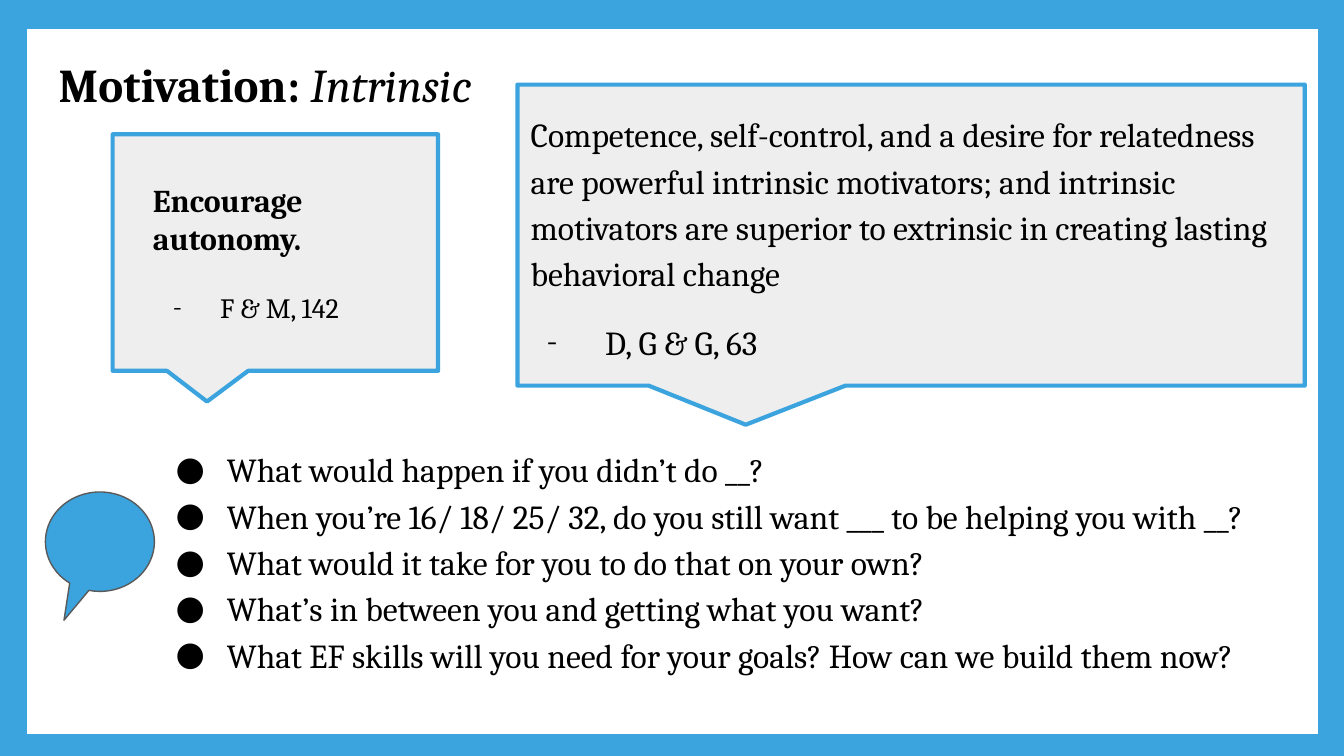
"""Build the slide on intrinsic motivation."""
from lxml import etree
from pptx import Presentation
from pptx.dml.color import RGBColor
from pptx.enum import shapes, text
from pptx.oxml import ns
from pptx.util import Cm, Pt

FONT = "Cambria"
COLORS = {"blue": "3BA3DD", "panel": "EEEEEE", "ink": "000000", "outline": "595959"}
QUESTIONS = [
    "What would happen if you didn’t do __?",
    "When you’re 16/ 18/ 25/ 32, do you still want ___ to be helping you with __?",
    "What would it take for you to do that on your own?",
    "What’s in between you and getting what you want?",
    "What EF skills will you need for your goals? How can we build them now?",
]
AUTONOMY = ["Encourage autonomy.", "F & M, 142"]
COMPETENCE = [
    "Competence, self-control, and a desire for relatedness are powerful intrinsic "
    "motivators; and intrinsic motivators are superior to extrinsic in creating "
    "lasting behavioral change",
    " D, G & G, 63",
]


def rgb(name):
    """Return the named colour."""
    return RGBColor.from_string(COLORS[name])


def style_run(r, size, bold=False, italic=False):
    """Format one run."""
    r.font.name, r.font.size = FONT, Pt(size)
    r.font.bold, r.font.italic = bold, italic
    r.font.color.rgb = rgb("ink")


def style_paragraph(p, size, bold=False, spacing=1.0, before=0):
    """Format a left-aligned paragraph and its runs."""
    p.alignment = text.PP_ALIGN.LEFT
    p.line_spacing, p.space_before = spacing, Pt(before)
    for r in p.runs:
        style_run(r, size, bold)


def add_bullet(p, char, hanging=0.97):
    """Give a paragraph a hanging bullet, with the hang in centimetres."""
    pPr = p._p.get_or_add_pPr()
    pPr.set("marL", str(Cm(1.27)))
    pPr.set("indent", str(-Cm(hanging)))
    color = etree.SubElement(pPr, ns.qn("a:buClr"))
    etree.SubElement(color, ns.qn("a:srgbClr"), val=COLORS["ink"])
    etree.SubElement(pPr, ns.qn("a:buFont"), typeface=FONT)
    etree.SubElement(pPr, ns.qn("a:buChar"), char=char)


def setup_frame(tf, anchor, left=0.25):
    """Set wrapping, anchor and insets of a text frame."""
    tf.word_wrap, tf.auto_size = True, text.MSO_AUTO_SIZE.NONE
    tf.vertical_anchor = anchor
    tf.margin_left = Cm(left)
    tf.margin_right = tf.margin_top = tf.margin_bottom = Cm(0.25)


def add_shape(s, kind, box, line, width, fill=None, tail=None):
    """Add a preset shape, with a callout tail if one is given."""
    sp = s.shapes.add_shape(kind, *map(Cm, box))
    sp.shadow.inherit = False
    sp.line.color.rgb, sp.line.width = rgb(line), Pt(width)
    if fill:
        sp.fill.solid()
        sp.fill.fore_color.rgb = rgb(fill)
    else:
        sp.fill.background()
    for i, value in enumerate(tail or []):
        sp.adjustments[i] = value
    return sp


def add_quote(s, box, lines, sizes, bold, spacing, before, left, hanging):
    """Add a callout with a statement and its dashed citation."""
    sp = add_shape(s, shapes.MSO_SHAPE.RECTANGULAR_CALLOUT, box, "blue", 2.25,
                   "panel", (-0.21, 0.63))
    tf = sp.text_frame
    setup_frame(tf, text.MSO_ANCHOR.MIDDLE, left)
    tf.text = "\n".join(lines)
    statement, citation = tf.paragraphs
    style_paragraph(statement, sizes[0], bold, spacing)
    style_paragraph(citation, sizes[1], spacing=spacing, before=before)
    add_bullet(citation, "-", hanging)


def set_title(s, strong, light):
    """Place the title and format its two parts."""
    sp = s.shapes.title
    sp.left, sp.top, sp.width, sp.height = map(Cm, (0.86, 0.79, 23.67, 1.6))
    setup_frame(sp.text_frame, text.MSO_ANCHOR.TOP)
    p = sp.text_frame.paragraphs[0]
    p.text = strong
    style_paragraph(p, 25.2, bold=True)
    r = p.add_run()
    r.text = light
    style_run(r, 25.2, italic=True)


def add_questions(s, box, lines):
    """Add the bulleted list of questions."""
    tf = s.shapes.add_textbox(*map(Cm, box)).text_frame
    setup_frame(tf, text.MSO_ANCHOR.TOP)
    tf.text = "\n".join(lines)
    for p in tf.paragraphs:
        style_paragraph(p, 18, spacing=1.15)
        add_bullet(p, "●")


def main():
    """Build and save the slide."""
    prs = Presentation()
    prs.slide_width, prs.slide_height = Cm(25.4), Cm(14.29)
    s = prs.slides.add_slide(prs.slide_layouts[5])
    add_shape(s, shapes.MSO_SHAPE.RECTANGLE, (0.2, 0.23, 25.02, 13.97), "blue", 18)
    set_title(s, "Motivation: ", "Intrinsic")
    add_questions(s, (2.77, 8.13, 23.24, 5.03), QUESTIONS)
    add_quote(s, (9.78, 1.6, 14.88, 5.69), COMPETENCE, (18, 18), False,
              spacing=1.15, before=12, left=0.25, hanging=0.97)
    add_quote(s, (2.13, 2.54, 6.15, 4.47), AUTONOMY, (17, 15), True,
              spacing=1.0, before=18, left=0.76, hanging=0.89)
    add_shape(s, shapes.MSO_SHAPE.OVAL_CALLOUT, (0.86, 9.3, 2.06, 1.88), "outline", 0.75,
              "blue", (-0.33, 0.79))
    prs.save("out.pptx")


if __name__ == "__main__":
    main()
